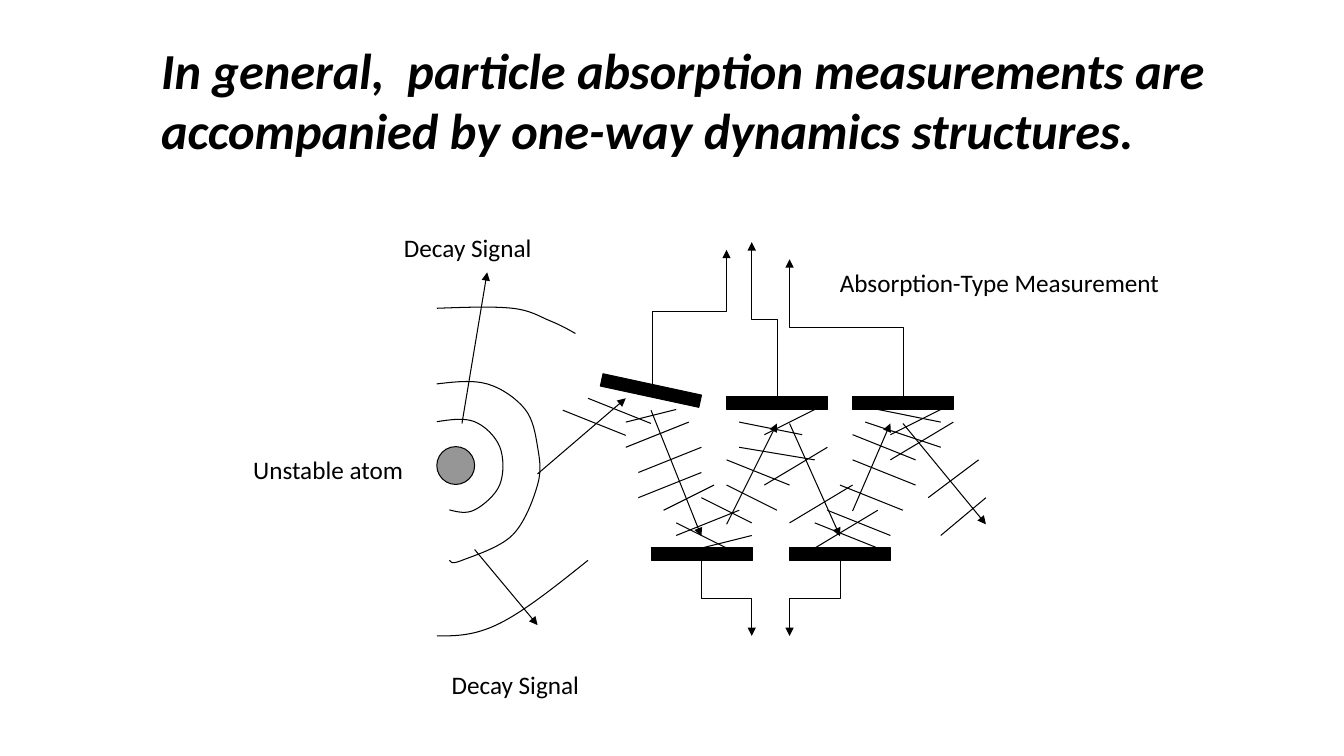
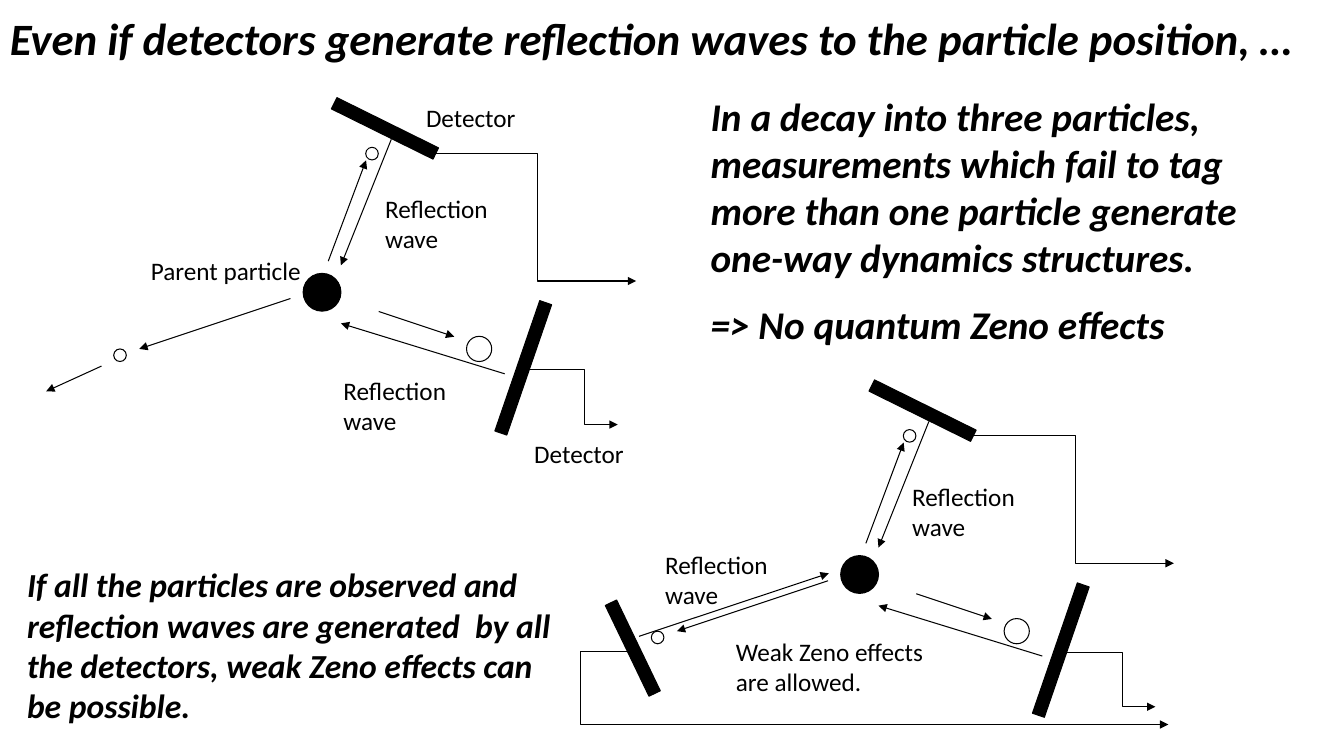
"""Build two slides on particle decay, absorption measurements and Zeno effects."""
from dataclasses import dataclass
from typing import NamedTuple

from lxml.etree import SubElement
from pptx import Presentation
from pptx.dml.color import RGBColor
from pptx.enum.shapes import MSO_CONNECTOR as CONN, MSO_SHAPE as SHAPE
from pptx.enum.text import MSO_AUTO_SIZE as AUTO
from pptx.oxml.ns import qn
from pptx.shapes.autoshape import Shape
from pptx.shapes.connector import Connector
from pptx.slide import Slide
from pptx.util import Pt

BLACK = RGBColor(0x00, 0x00, 0x00)
WHITE = RGBColor(0xFF, 0xFF, 0xFF)
GRAY = RGBColor(0x96, 0x96, 0x96)
FONT = "Calibri"
LINE_WIDTH = Pt(0.75)
BAR_THICKNESS = 9

Point = tuple[float, float]


class Segment(NamedTuple):
    x1: float
    y1: float
    x2: float
    y2: float


class Elbow(NamedTuple):
    x1: float
    y1: float
    x2: float
    y2: float
    bend_percent: float = 50
    vertical: bool = False


class Bar(NamedTuple):
    x: float
    y: float
    length: float
    angle: float = 0


class Disc(NamedTuple):
    x: float
    y: float
    size: float
    fill: RGBColor = WHITE


@dataclass(frozen=True)
class Label:
    x: float
    y: float
    w: float
    h: float
    paragraphs: tuple[str, ...]
    size: float = 18
    strong: bool = False


ABSORPTION_LABELS = (
    Label(108, 24.25, 768, 94.5, ("In general,  particle absorption measurements are "
                                  "accompanied by one-way dynamics structures.",), 36, True),
    Label(173.75, 321, 124.5, 29, ("Unstable atom",)),
    Label(281.5, 162.25, 130.5, 29, ("Decay Signal",)),
    Label(315.5, 474.25, 130.5, 29, ("Decay Signal",)),
    Label(592.75, 187.25, 261.5, 29, ("Absorption-Type Measurement",)),
)
WAVES: tuple[tuple[Point, ...], ...] = (
    ((312, 301.25), (339, 301.25), (357, 319.25), (357, 346.25), (339, 364.25),
     (321, 364.25)),
    ((312, 274.25), (348, 274.25), (375, 292.25), (384, 319.25), (384, 346.25),
     (366, 382.25), (330, 400.25), (321, 400.25)),
    ((312, 220.25), (366, 220.25), (393, 229.25), (411, 238.25)),
    ((420, 400.25), (357, 445.25), (312, 454.25)),
)
ABSORBERS = (
    Bar(429, 274.5, 72, 12.2), Bar(465.25, 391.25, 72), Bar(519, 283.25, 72),
    Bar(564, 391.25, 72), Bar(609, 283.25, 72),
)
WAVEFRONTS = (
    Segment(402, 293, 447, 311), Segment(420, 284.5, 465, 302.5),
    Segment(483, 292.5, 447, 301.5), Segment(492, 301.5, 447, 319.5),
    Segment(501, 319.5, 456, 337.5), Segment(510, 346.5, 474, 364.5),
    Segment(528, 364.5, 483, 382.5), Segment(537, 382.5, 501, 391.5),
    Segment(483, 373.5, 519, 391.5), Segment(501, 355.5, 537, 373.5),
    Segment(519, 328.5, 564, 346.5), Segment(528, 301.5, 573, 310.5),
    Segment(582, 292.5, 546, 310.5), Segment(591, 319.5, 546, 346.5),
    Segment(609, 346.5, 564, 373.5), Segment(627, 364.5, 582, 391.5),
    Segment(627, 391.5, 582, 373.5), Segment(645, 364.5, 600, 346.5),
    Segment(654, 328.5, 609, 310.5), Segment(627, 292.5, 672, 301.5),
    Segment(636, 310.5, 672, 292.5), Segment(636, 328.5, 681, 301.5),
    Segment(663, 355.5, 699, 328.5), Segment(672, 382.5, 704.25, 355.5),
    Segment(456, 355.5, 501, 337.5), Segment(528, 319.5, 582, 328.5),
    Segment(519, 346.5, 555, 364.5), Segment(609, 328.5, 654, 346.5),
    Segment(591, 364.5, 636, 382.5), Segment(618, 301.5, 672, 319.5),
)
SIGNALS = (
    Elbow(501, 400.25, 537, 454.25, vertical=True),
    Elbow(600.25, 400.25, 564, 454.25, vertical=True),
    Elbow(466, 274.5, 519, 178.5, 53.9, True),
    Elbow(555.5, 283.25, 537, 173, vertical=True),
    Elbow(645.5, 283.25, 564, 185.25, vertical=True),
)
FLIGHTS = (
    Segment(330, 302.5, 348, 194.5), Segment(339, 392.5, 384, 446.5),
    Segment(384, 338.5, 447, 284.5), Segment(465, 293, 501, 383),
    Segment(519, 374.5, 555, 302.5), Segment(564, 302.5, 600, 383),
    Segment(609, 365, 636, 302.5), Segment(645, 302.5, 704.25, 374.5),
)

DECAY_ORIGINS: tuple[Point, ...] = ((0, 0), (384, 201.6))
DECAY_DISCS = (
    Disc(216.5, 195.25, 27, BLACK), Disc(333.25, 240.25, 18),
    Disc(81.25, 249.25, 9), Disc(261.25, 105.25, 9),
)
DECAY_DETECTORS = (Bar(324.5, 258.25, 98.5, 109), Bar(234.5, 87.25, 81, 26.3))
DECAY_ARROWS = (
    Segment(270.5, 222.5, 324.5, 240.5), Segment(207.5, 213.25, 99.5, 249.25),
    Segment(234.5, 186.5, 261.5, 114.5), Segment(360.5, 267, 243.5, 231),
    Segment(279.5, 99.5, 243.5, 189.5),
)
DECAY_OUTPUTS = (
    Elbow(378, 264.25, 441.25, 303.25, 62.8), Elbow(311, 109.75, 454.5, 200.75, 50.9),
)
ESCAPE_ARROW = Segment(72.5, 261.5, 33, 279.5)
THIRD_DETECTOR = Bar(416, 458.5, 72, 64.3)
THIRD_OUTPUT = Elbow(448, 465.25, 834.5, 517.5, -8.7)
THIRD_REFLECTION = Segment(456.5, 454.5, 592, 409.5)
REFLECTION_SPOTS: tuple[Point, ...] = (
    (268, 134.5), (238.25, 264.25), (644.5, 340), (468, 389),
)
ZENO_LABELS = (
    Label(500.5, 62.25, 396, 193.5, (
        "In a decay into three particles, measurements which fail to tag more than "
        "one particle generate one-way dynamics structures.",
        "=> No quantum Zeno effects"), 28, True),
    Label(100.75, 178.5, 139.5, 29, ("Parent particle",)),
    Label(297.25, 69.75, 85.5, 29, ("Detector",)),
    Label(374.5, 309.75, 85.5, 29, ("Detector",)),
    Label(0, 4.25, 960, 46, ("Even if detectors generate reflection waves to the "
                             "particle position, …",), 32, True),
    Label(12.25, 399.5, 396, 124, (
        "If all the particles are observed and reflection waves are generated  by all "
        "the detectors, weak Zeno effects can be possible.",), 24, True),
    Label(518.5, 450.75, 201, 51, ("Weak Zeno effects", "are allowed.")),
    *(Label(x, y, 116.5, 51, ("Reflection wave",)) for x, y in REFLECTION_SPOTS),
)


def outline(sp: Shape | Connector) -> None:
    """Give a shape or connector the common thin black line."""
    sp.line.color.rgb = BLACK
    sp.line.width = LINE_WIDTH


def add_solid(s: Slide, kind: SHAPE, x: float, y: float, w: float, h: float,
              fill: RGBColor) -> Shape:
    """Draw a filled and outlined preset shape."""
    sp = s.shapes.add_shape(kind, Pt(x), Pt(y), Pt(w), Pt(h))
    sp.shadow.inherit = False
    sp.fill.solid()
    sp.fill.fore_color.rgb = fill
    outline(sp)
    return sp


def add_disc(s: Slide, disc: Disc, dx: float = 0, dy: float = 0) -> None:
    """Draw a particle."""
    add_solid(s, SHAPE.OVAL, disc.x + dx, disc.y + dy, disc.size, disc.size, disc.fill)


def add_bar(s: Slide, bar: Bar, dx: float = 0, dy: float = 0) -> None:
    """Draw a detector plate."""
    sp = add_solid(s, SHAPE.RECTANGLE, bar.x + dx, bar.y + dy, bar.length,
                   BAR_THICKNESS, BLACK)
    sp.rotation = bar.angle


def add_wire(s: Slide, kind: CONN, x1: float, y1: float, x2: float, y2: float,
             arrow: bool) -> Connector:
    """Draw a connector without shadow, optionally with an arrowhead."""
    c = s.shapes.add_connector(kind, Pt(x1), Pt(y1), Pt(x2), Pt(y2))
    outline(c)
    spPr = c.element.spPr
    if arrow:
        SubElement(spPr.find(qn("a:ln")), qn("a:tailEnd"), type="triangle")
    SubElement(spPr, qn("a:effectLst"))
    return c


def add_segment(s: Slide, seg: Segment, dx: float = 0, dy: float = 0,
                arrow: bool = True) -> None:
    """Draw a straight line or arrow."""
    add_wire(s, CONN.STRAIGHT, seg.x1 + dx, seg.y1 + dy, seg.x2 + dx, seg.y2 + dy, arrow)


def add_elbow(s: Slide, elbow: Elbow, dx: float = 0, dy: float = 0) -> None:
    """Draw a bent arrow that leaves horizontally or vertically."""
    x1, x2 = elbow.x1 + dx, elbow.x2 + dx
    y1, y2 = elbow.y1 + dy, elbow.y2 + dy
    rightward, downward = x2 > x1, y2 > y1
    if elbow.vertical:
        cx, cy = (x1 + x2) / 2, (y1 + y2) / 2
        half_w, half_h = abs(y2 - y1) / 2, abs(x2 - x1) / 2
        if rightward == downward:
            half_w = -half_w
        x1, y1, x2, y2 = cx - half_w, cy - half_h, cx + half_w, cy + half_h
    c = add_wire(s, CONN.ELBOW, x1, y1, x2, y2, True)
    spPr = c.element.spPr
    if elbow.vertical:
        angle = 270 if rightward else 90
        spPr.find(qn("a:xfrm")).set("rot", str(angle * 60000))
    guides = spPr.find(qn("a:prstGeom")).find(qn("a:avLst"))
    SubElement(guides, qn("a:gd"), name="adj1",
               fmla=f"val {round(elbow.bend_percent * 1000)}")


def midpoint(a: Point, b: Point) -> Point:
    """Return the point halfway between two points."""
    return (a[0] + b[0]) / 2, (a[1] + b[1]) / 2


def curve_points(knots: tuple[Point, ...]) -> list[Point]:
    """List two control points and an end point for each curve through the knots."""
    tangents = [((b[0] - a[0]) / 6, (b[1] - a[1]) / 6) for a, b in zip(knots, knots[2:])]
    inner = list(zip(knots[1:-1], tangents))
    before = [(k[0] - t[0], k[1] - t[1]) for k, t in inner]
    after = [(k[0] + t[0], k[1] + t[1]) for k, t in inner]
    leaving = [midpoint(knots[0], before[0]), *after]
    arriving = [*before, midpoint(knots[-1], after[-1])]
    return [q for curve in zip(leaving, arriving, knots[1:]) for q in curve]


def add_wave(s: Slide, knots: tuple[Point, ...]) -> None:
    """Draw an open wave front made of cubic curves."""
    x, y = knots[0]
    builder = s.shapes.build_freeform(Pt(x), Pt(y))
    builder.add_line_segments([(Pt(x), Pt(y)) for x, y in curve_points(knots)], close=False)
    sp = builder.convert_to_shape()
    sp.shadow.inherit = False
    sp.fill.background()
    outline(sp)
    trace = next(sp.element.iter(qn("a:path")))
    lines = trace.findall(qn("a:lnTo"))
    for i in range(0, len(lines), 3):
        curve = SubElement(trace, qn("a:cubicBezTo"))
        for line in lines[i:i + 3]:
            curve.append(line[0])
            trace.remove(line)


def add_label(s: Slide, label: Label) -> None:
    """Draw a text box; strong text is bold italic with spaced paragraphs."""
    sp = s.shapes.add_textbox(Pt(label.x), Pt(label.y), Pt(label.w), Pt(label.h))
    tf = sp.text_frame
    tf.word_wrap = True
    tf.auto_size = AUTO.SHAPE_TO_FIT_TEXT
    for i, text in enumerate(label.paragraphs):
        p = tf.add_paragraph() if i else tf.paragraphs[0]
        if i and label.strong:
            p.space_before = Pt(label.size / 2)
        r = p.add_run()
        r.text = text
        r.font.name = FONT
        r.font.size = Pt(label.size)
        r.font.bold = r.font.italic = label.strong
        r.font.color.rgb = BLACK


def draw_absorption(s: Slide) -> None:
    """Draw the chain of absorption measurements."""
    add_disc(s, Disc(312, 319, 27, GRAY))
    for knots in WAVES:
        add_wave(s, knots)
    for bar in ABSORBERS:
        add_bar(s, bar)
    for seg in WAVEFRONTS:
        add_segment(s, seg, arrow=False)
    for elbow in SIGNALS:
        add_elbow(s, elbow)
    for seg in FLIGHTS:
        add_segment(s, seg)
    for label in ABSORPTION_LABELS:
        add_label(s, label)


def draw_zeno(s: Slide) -> None:
    """Draw the decays with two and with three detectors."""
    for dx, dy in DECAY_ORIGINS:
        for items, draw in ((DECAY_DISCS, add_disc), (DECAY_DETECTORS, add_bar),
                            (DECAY_ARROWS, add_segment), (DECAY_OUTPUTS, add_elbow)):
            for item in items:
                draw(s, item, dx, dy)
    add_segment(s, ESCAPE_ARROW)
    add_bar(s, THIRD_DETECTOR)
    add_elbow(s, THIRD_OUTPUT)
    add_segment(s, THIRD_REFLECTION)
    for label in ZENO_LABELS:
        add_label(s, label)


prs = Presentation()
prs.slide_width, prs.slide_height = Pt(960), Pt(540)
for draw_slide in (draw_absorption, draw_zeno):
    draw_slide(prs.slides.add_slide(prs.slide_layouts[6]))
prs.save("out.pptx")
